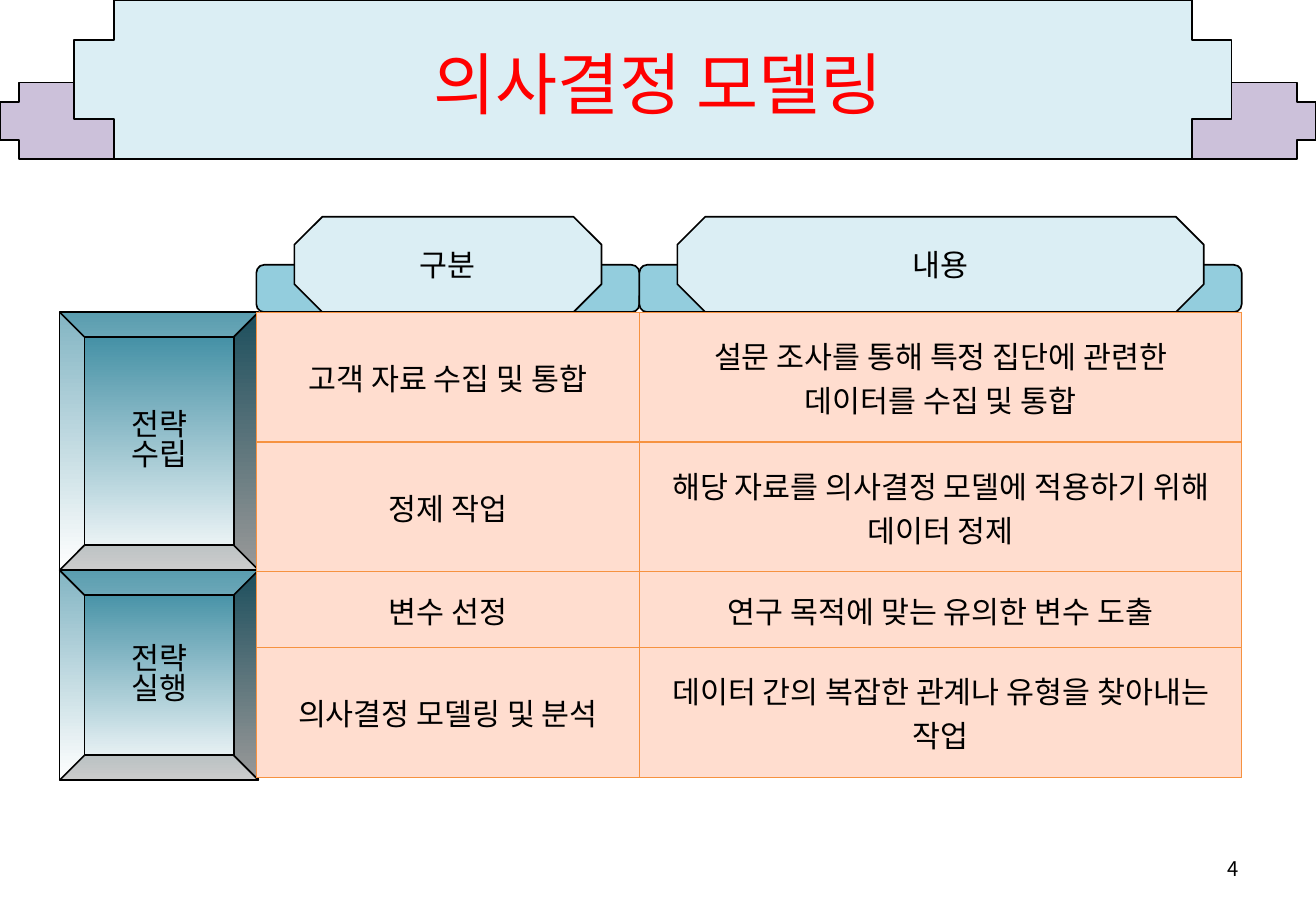
from lxml import etree
from pptx import Presentation
from pptx import util as u
from pptx.dml.color import RGBColor
from pptx.enum import shapes, text
from pptx.oxml import ns

TITLE = "의사결정 모델링"
PAGE_NUMBER = "4"
HEADERS = ["구분", "내용"]
STAGES = [(["전략", "수립"], 153), (["전략", "실행"], 124.5)]
ROWS = [
    ("고객 자료 수집 및 통합", "설문 조사를 통해 특정 집단에 관련한 데이터를 수집 및 통합", 77),
    ("정제 작업", "해당 자료를 의사결정 모델에 적용하기 위해 데이터 정제", 77),
    ("변수 선정", "연구 목적에 맞는 유의한 변수 도출", 45),
    ("의사결정 모델링 및 분석", "데이터 간의 복잡한 관계나 유형을 찾아내는 작업", 77),
]

FONT = "Noto Sans CJK KR"
BLACK = RGBColor(0, 0, 0)
RED = RGBColor(0xFF, 0, 0)
WHITE = RGBColor(0xFF, 0xFF, 0xFF)
LILAC = RGBColor(0xCC, 0xC1, 0xDA)
PALE_BLUE = RGBColor(0xDB, 0xEE, 0xF4)
SKY_BLUE = RGBColor(0x93, 0xCD, 0xDD)
TEAL = RGBColor(0x31, 0x85, 0x9C)
PEACH = RGBColor(0xFF, 0xDD, 0xCF)
ORANGE = RGBColor(0xF6, 0x92, 0x40)

TABLE_LEFT, TABLE_TOP = 152, 185
COLUMN_WIDTHS = [227, 357]
TAB_HEIGHT, OCTAGON_HEIGHT, OCTAGON_INSET = 28, 56.5, 22.5
STAGE_LEFT, STAGE_WIDTH = 35.3, 118
PRESET = shapes.MSO_SHAPE
CENTER = text.PP_ALIGN.CENTER


def write(frame, lines, size=18, color=BLACK, align=CENTER, spacing=None):
    frame.word_wrap = True
    for index, line in enumerate(lines):
        para = frame.paragraphs[0] if index == 0 else frame.add_paragraph()
        para.alignment = align
        if spacing:
            para.line_spacing = spacing
        span = para.add_run()
        span.text = line
        span.font.size = u.Pt(size)
        span.font.name = FONT
        span.font.bold = False
        span.font.color.rgb = color
        east_asian = etree.SubElement(span.font._element, ns.qn("a:ea"))
        east_asian.set("typeface", FONT)


def add_box(page, preset, left, top, width, height, fill):
    box = page.shapes.add_shape(preset, *map(u.Pt, (left, top, width, height)))
    box.shadow.inherit = False
    box.fill.solid()
    box.fill.fore_color.rgb = fill
    box.line.color.rgb = BLACK
    box.line.width = u.Pt(1)
    box.text_frame.vertical_anchor = text.MSO_ANCHOR.MIDDLE
    return box


def add_label(page, left, top, width, height, line, **style):
    box = page.shapes.add_textbox(*map(u.Pt, (left, top, width, height)))
    box.text_frame.vertical_anchor = text.MSO_ANCHOR.MIDDLE
    write(box.text_frame, [line], **style)


def set_borders(cell):
    properties = cell._tc.get_or_add_tcPr()
    for side in ("lnL", "lnR", "lnT", "lnB"):
        border = etree.SubElement(properties, ns.qn(f"a:{side}"), w=str(u.Pt(0.75)))
        fill = etree.SubElement(border, ns.qn("a:solidFill"))
        etree.SubElement(fill, ns.qn("a:srgbClr"), val=str(ORANGE))


def add_headers(page):
    left = TABLE_LEFT
    for header, width in zip(HEADERS, COLUMN_WIDTHS):
        add_box(page, PRESET.ROUNDED_RECTANGLE, left, TABLE_TOP - TAB_HEIGHT,
                width, TAB_HEIGHT, SKY_BLUE)
        octagon = add_box(page, PRESET.OCTAGON, left + OCTAGON_INSET,
                          TABLE_TOP - OCTAGON_HEIGHT, width - 2 * OCTAGON_INSET,
                          OCTAGON_HEIGHT, PALE_BLUE)
        write(octagon.text_frame, [header])
        left += width


def add_stages(page):
    top = TABLE_TOP
    for lines, height in STAGES:
        bevel = add_box(page, PRESET.BEVEL, STAGE_LEFT, top, STAGE_WIDTH, height, TEAL)
        bevel.fill.gradient()
        bevel.fill.gradient_angle = 270
        for stop, color in zip(bevel.fill.gradient_stops, (TEAL, WHITE)):
            stop.color.rgb = color
        write(bevel.text_frame, lines, spacing=0.82)
        top += height


def add_steps(page):
    height = sum(row[-1] for row in ROWS)
    area = (TABLE_LEFT, TABLE_TOP, sum(COLUMN_WIDTHS), height)
    table = page.shapes.add_table(len(ROWS), len(COLUMN_WIDTHS), *map(u.Pt, area)).table
    table.first_row = table.horz_banding = False
    for column, width in zip(table.columns, COLUMN_WIDTHS):
        column.width = u.Pt(width)
    for row, (*values, row_height) in zip(table.rows, ROWS):
        row.height = u.Pt(row_height)
        for cell, value in zip(row.cells, values):
            set_borders(cell)
            cell.fill.solid()
            cell.fill.fore_color.rgb = PEACH
            cell.vertical_anchor = text.MSO_ANCHOR.MIDDLE
            cell.margin_left = cell.margin_right = u.Pt(10)
            write(cell.text_frame, [value])


def main():
    deck = Presentation()
    deck.slide_width, deck.slide_height = u.Pt(780), u.Pt(540)
    page = deck.slides.add_slide(deck.slide_layouts[6])
    add_box(page, PRESET.CROSS, 0, 49, 780, 45.3, LILAC)
    add_box(page, PRESET.CROSS, 44, 0, 686, 94.3, PALE_BLUE)
    add_label(page, 39, 4, 702, 90, TITLE, size=40, color=RED)
    add_label(page, 559, 500.5, 182, 28.8, PAGE_NUMBER, size=12,
              align=text.PP_ALIGN.RIGHT)
    add_headers(page)
    add_stages(page)
    add_steps(page)
    deck.save("out.pptx")


if __name__ == "__main__":
    main()
